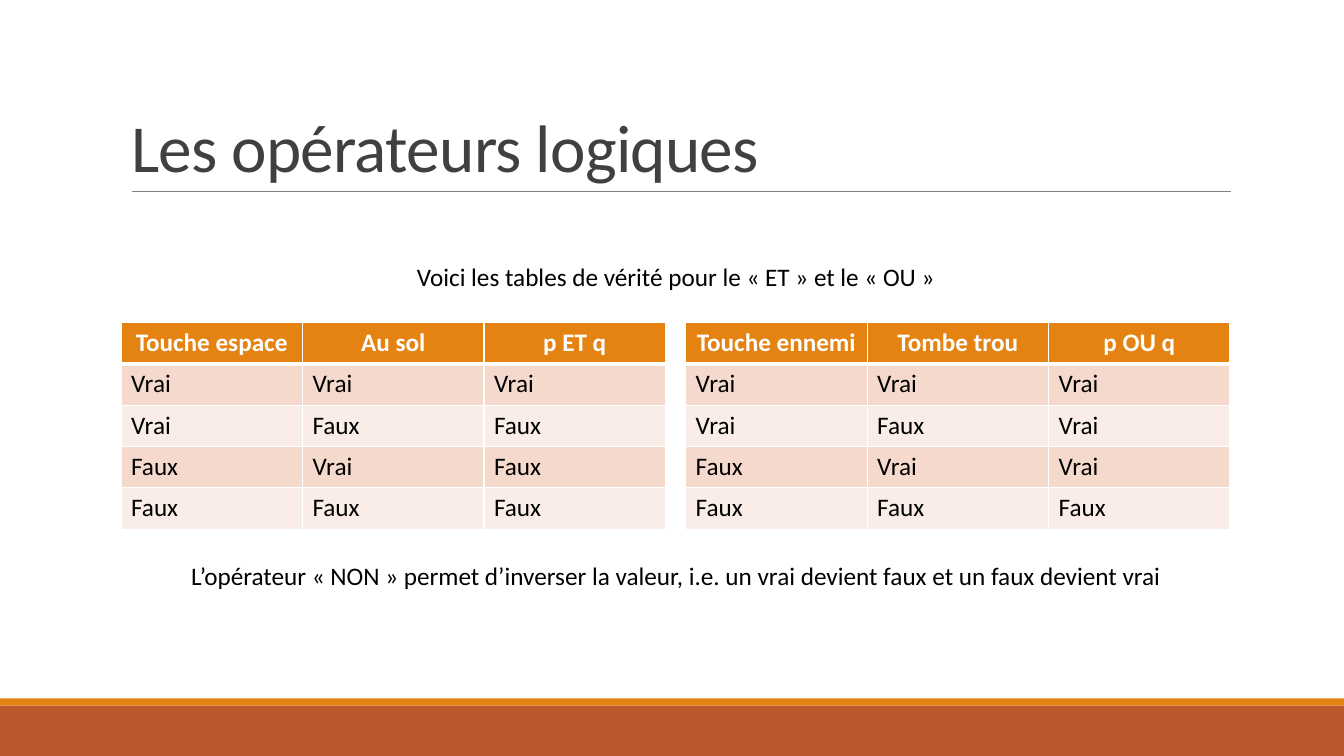
from dataclasses import dataclass
from itertools import product
from typing import Any, Callable

from lxml import etree
from pptx import Presentation
from pptx import util as u
from pptx.dml.color import RGBColor
from pptx.enum import shapes, text
from pptx.oxml import ns

COLORS = {
    "orange": "E48312", "rust": "BD582C", "gray": "808080", "title": "404040",
    "black": "000000", "white": "FFFFFF", "band_dark": "F5D9CC", "band_light": "FAEDE7",
}
FONT = "Calibri"
COLUMN_WIDTH, ROW_HEIGHT = 1.8, 0.41
TABLE_TOP = 3.2


@dataclass
class Bar:
    top: float
    height: float
    color: str


@dataclass
class Caption:
    left: float
    top: float
    width: float
    words: str


@dataclass
class TruthTable:
    left: float
    headers: tuple[str, str, str]
    operator: Callable[[bool, bool], bool]


BARS = [Bar(7, 0.5, "rust"), Bar(6.93, 0.07, "orange")]
CAPTIONS = [
    Caption(4, 2.54, 5.41, "Voici les tables de vérité pour le « ET » et le « OU »"),
    Caption(1.76, 5.51, 9.89, "L’opérateur « NON » permet d’inverser la valeur, "
            "i.e. un vrai devient faux et un faux devient vrai"),
]
TABLES = [
    TruthTable(1.2, ("Touche espace", "Au sol", "p ET q"), lambda p, q: p and q),
    TruthTable(6.8, ("Touche ennemi", "Tombe trou", "p OU q"), lambda p, q: p or q),
]


def rgb(name: str) -> RGBColor:
    return RGBColor.from_string(COLORS[name])


def write(frame: Any, words: str, color: str, size: float = 18, bold: bool = False,
          align: Any = text.PP_ALIGN.LEFT) -> Any:
    """Fill a text frame with one formatted paragraph and return its run."""
    para = frame.paragraphs[0]
    para.alignment = align
    span = para.add_run()
    span.text = words
    for name, value in {"name": FONT, "size": u.Pt(size), "bold": bold}.items():
        setattr(span.font, name, value)
    span.font.color.rgb = rgb(color)
    return span


def add_bar(page: Any, bar: Bar, width: int) -> None:
    shape = page.shapes.add_shape(shapes.MSO_SHAPE.RECTANGLE, 0, u.Inches(bar.top),
                                  width, u.Inches(bar.height))
    shape.shadow.inherit = False
    shape.fill.solid()
    shape.fill.fore_color.rgb = rgb(bar.color)
    shape.line.fill.background()


def add_rule(page: Any) -> None:
    rule = page.shapes.add_connector(shapes.MSO_CONNECTOR.STRAIGHT, u.Inches(1.31),
                                     u.Inches(1.9), u.Inches(12.21), u.Inches(1.9))
    rule.line.color.rgb = rgb("gray")
    rule.line.width = u.Pt(0.5)
    etree.SubElement(rule._element.spPr, ns.qn("a:effectLst"))


def format_title(page: Any) -> None:
    title = page.shapes.title
    place = {"left": 1.2, "top": 0.31, "width": 11, "height": 1.59}
    for name, value in place.items():
        setattr(title, name, u.Inches(value))
    frame = title.text_frame
    layout = {"vertical_anchor": text.MSO_ANCHOR.BOTTOM, "word_wrap": True,
              "auto_size": text.MSO_AUTO_SIZE.NONE}
    for name, value in layout.items():
        setattr(frame, name, value)
    span = write(frame, "Les opérateurs logiques", "title", 48)
    span.font._element.set("spc", "-50")
    frame.paragraphs[0].line_spacing = 0.85


def add_caption(page: Any, caption: Caption) -> None:
    box = page.shapes.add_textbox(u.Inches(caption.left), u.Inches(caption.top),
                                  u.Inches(caption.width), u.Inches(0.4))
    box.text_frame.word_wrap = False
    box.text_frame.auto_size = text.MSO_AUTO_SIZE.SHAPE_TO_FIT_TEXT
    write(box.text_frame, caption.words, "black", align=text.PP_ALIGN.CENTER)


def add_borders(cell: Any, row: int) -> None:
    """White borders, thicker between the header and the first row."""
    widths = {"lnL": 1, "lnR": 1, "lnT": 3 if row == 1 else 1, "lnB": 3 if row == 0 else 1}
    properties = cell._tc.get_or_add_tcPr()
    for side, points in widths.items():
        line = etree.SubElement(properties, ns.qn(f"a:{side}"), w=str(u.Pt(points)))
        fill = etree.SubElement(line, ns.qn("a:solidFill"))
        etree.SubElement(fill, ns.qn("a:srgbClr"), val=COLORS["white"])


def add_truth_table(page: Any, truth: TruthTable) -> None:
    rows = [truth.headers]
    for p, q in product((True, False), repeat=2):
        rows.append(tuple("Vrai" if value else "Faux"
                          for value in (p, q, truth.operator(p, q))))
    columns = len(truth.headers)
    table = page.shapes.add_table(
        len(rows), columns, u.Inches(truth.left), u.Inches(TABLE_TOP),
        u.Inches(COLUMN_WIDTH * columns), u.Inches(ROW_HEIGHT * len(rows))).table
    for r, words in enumerate(rows):
        header = r == 0
        fill = "orange" if header else "band_dark" if r % 2 else "band_light"
        for c, word in enumerate(words):
            cell = table.cell(r, c)
            add_borders(cell, r)
            cell.fill.solid()
            cell.fill.fore_color.rgb = rgb(fill)
            write(cell.text_frame, word, "white" if header else "black", bold=header,
                  align=text.PP_ALIGN.CENTER if header else text.PP_ALIGN.LEFT)


def main() -> None:
    deck = Presentation()
    deck.slide_width, deck.slide_height = u.Inches(13.33), u.Inches(7.5)
    page = deck.slides.add_slide(deck.slide_layouts[5])

    # Footer bars and title
    for bar in BARS:
        add_bar(page, bar, deck.slide_width)
    add_rule(page)
    format_title(page)

    # Truth tables and their captions
    for truth in TABLES:
        add_truth_table(page, truth)
    for caption in CAPTIONS:
        add_caption(page, caption)

    deck.save("out.pptx")


if __name__ == "__main__":
    main()
